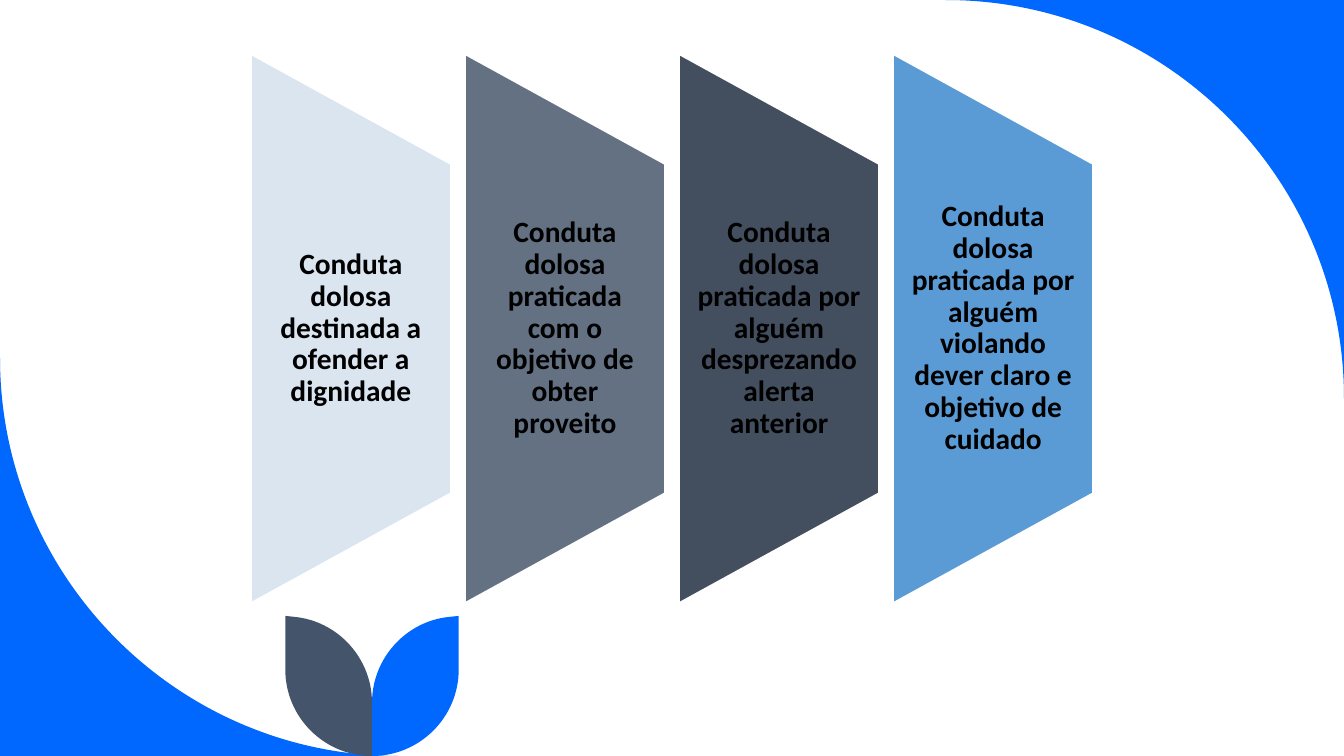
import lxml.etree
import pptx
import pptx.dml.color
import pptx.enum.shapes
import pptx.enum.text
import pptx.oxml.ns
import pptx.util

Inches = pptx.util.Inches
qn = pptx.oxml.ns.qn

COLOURS = {
    "blue": "0068FF",
    "slate": "44546A",
    "white": "FFFFFF",
    "text": "000000",
}
PANELS = [
    ("DAE5EF", "Conduta dolosa destinada a ofender a dignidade"),
    ("637183", "Conduta dolosa praticada com o objetivo de obter proveito"),
    ("434E5E", "Conduta dolosa praticada por alguém desprezando alerta anterior"),
    ("5B9BD5", "Conduta dolosa praticada por alguém violando dever claro e objetivo de cuidado"),
]
SLIDE_WIDTH, SLIDE_HEIGHT = 13.33, 7.5
FIRST_LEFT, LAST_LEFT = 2.49, 8.86
PANEL_PITCH = (LAST_LEFT - FIRST_LEFT) / (len(PANELS) - 1)
PANEL_WIDTH, PANEL_HEIGHT = 1.98, 5.44
PANEL_MIDDLE = 3.26
TEXT_HEIGHT = 3.26
LEAF_STEM = 3.69

# Each segment is one end point for a line, or two controls and an end for a curve.
CORNER = [
    [(0, 3.55)],
    [(0, 5.73), (1.77, 7.5), (3.95, 7.5)],
    [(0, 7.5)],
]
LEAF = [
    [(0.86, 6.11)],
    [(0.86, 6.64)],
    [(0.86, 7.12), (0.47, 7.5), (0, 7.5)],
    [(0, 6.97)],
    [(0, 6.53), (0.34, 6.16), (0.77, 6.12)],
]


def mapped(segments, move):
    return [[move(x, y) for x, y in segment] for segment in segments]


class SlideBuilder:
    def __init__(self, slide):
        self.slide = slide
        self.font_name = "Calibri"
        self.font_size = pptx.util.Pt(21)

    def colour(self, value):
        return pptx.dml.color.RGBColor.from_string(COLOURS.get(value, value))

    def fill(self, shape, value):
        shape.shadow.inherit = False
        shape.fill.solid()
        shape.fill.fore_color.rgb = self.colour(value)

    def outline(self, segments, value):
        """Draw a closed outline of lines and Bezier curves."""
        segments = [[(Inches(x), Inches(y)) for x, y in segment] for segment in segments]
        ends = [segment[-1] for segment in segments]
        builder = self.slide.shapes.build_freeform(*ends[0])
        builder.add_line_segments(ends[1:], close=True)
        shape = builder.convert_to_shape()
        self.fill(shape, value)
        shape.line.fill.background()

        for line, segment in zip(list(shape.element.iter(qn("a:lnTo"))), segments[1:]):
            if len(segment) == 3:
                bezier = lxml.etree.Element(qn("a:cubicBezTo"))
                for x, y in segment:
                    lxml.etree.SubElement(
                        bezier, qn("a:pt"), x=str(x - shape.left), y=str(y - shape.top)
                    )
                line.getparent().replace(line, bezier)

    def panel(self, left, value):
        """Draw a trapezoid turned so that its wide edge is on the left."""
        shape = self.slide.shapes.add_shape(
            pptx.enum.shapes.MSO_SHAPE.FLOWCHART_MANUAL_OPERATION,
            Inches(left + (PANEL_WIDTH - PANEL_HEIGHT) / 2),
            Inches(PANEL_MIDDLE - PANEL_WIDTH / 2),
            Inches(PANEL_HEIGHT),
            Inches(PANEL_WIDTH),
        )
        shape.rotation = 270
        self.fill(shape, value)
        shape.line.color.rgb = self.colour("white")
        shape.line.width = pptx.util.Pt(1)

    def text(self, left, wording):
        box = self.slide.shapes.add_textbox(
            Inches(left), Inches(PANEL_MIDDLE - TEXT_HEIGHT / 2),
            Inches(PANEL_WIDTH), Inches(TEXT_HEIGHT),
        )
        frame = box.text_frame
        frame.word_wrap = True
        frame.vertical_anchor = pptx.enum.text.MSO_ANCHOR.MIDDLE
        frame.margin_left = frame.margin_right = Inches(0.15)
        frame.margin_top = frame.margin_bottom = 0
        paragraph = frame.paragraphs[0]
        paragraph.text = wording
        paragraph.alignment = pptx.enum.text.PP_ALIGN.CENTER
        paragraph.line_spacing = 0.9
        paragraph.space_after = pptx.util.Pt(7)
        paragraph.font.name = self.font_name
        paragraph.font.size = self.font_size
        paragraph.font.bold = True
        paragraph.font.color.rgb = self.colour("text")


def main():
    presentation = pptx.Presentation()
    presentation.slide_width = Inches(SLIDE_WIDTH)
    presentation.slide_height = Inches(SLIDE_HEIGHT)
    blank_layout = presentation.slide_layouts[6]
    builder = SlideBuilder(presentation.slides.add_slide(blank_layout))

    builder.outline(mapped(CORNER, lambda x, y: (SLIDE_WIDTH - x, SLIDE_HEIGHT - y)), "blue")
    builder.outline(CORNER, "blue")
    builder.outline(mapped(LEAF, lambda x, y: (LEAF_STEM + x, y)), "blue")
    builder.outline(mapped(LEAF, lambda x, y: (LEAF_STEM - x, y)), "slate")

    for index, (value, wording) in enumerate(PANELS):
        left = FIRST_LEFT + index * PANEL_PITCH
        builder.panel(left, value)
        builder.text(left, wording)

    presentation.save("out.pptx")


if __name__ == "__main__":
    main()
